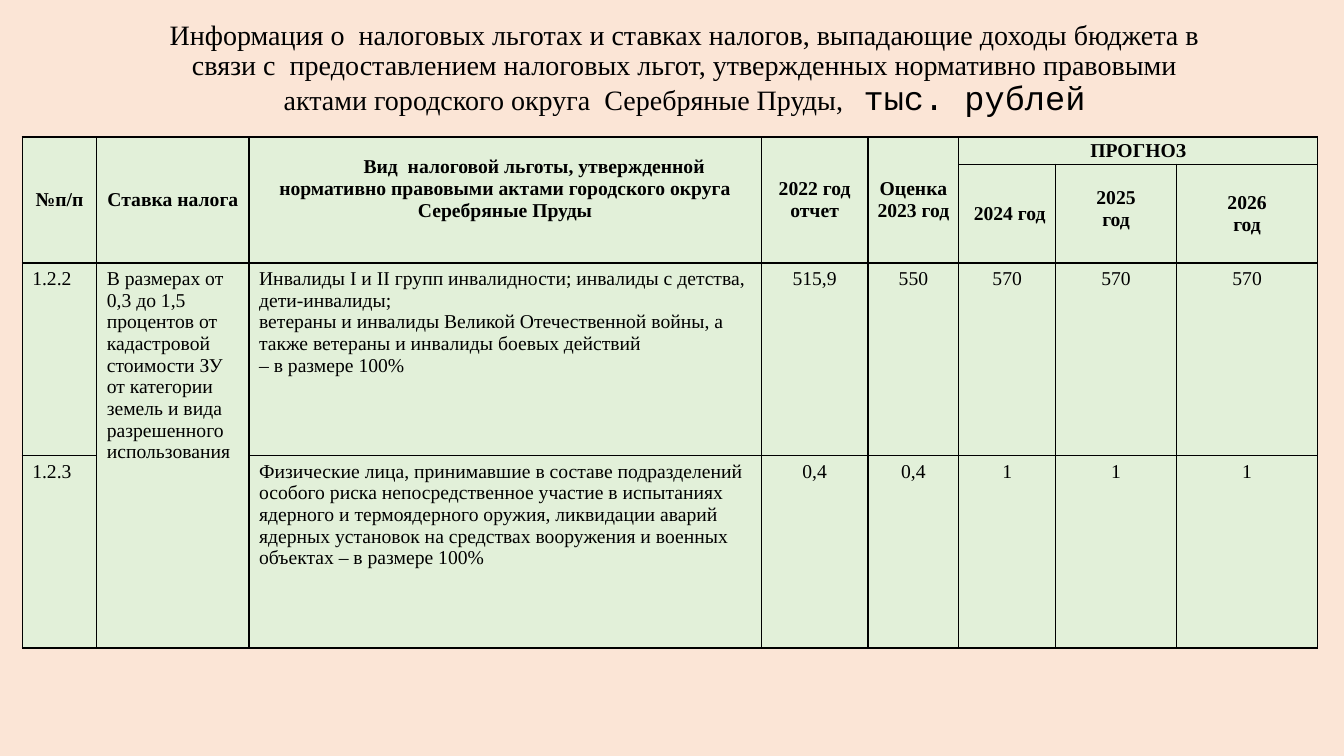
from lxml import etree
from pptx import Presentation
from pptx.dml.color import RGBColor
from pptx.enum.text import MSO_ANCHOR, PP_ALIGN
from pptx.oxml.ns import qn
from pptx.util import Inches, Pt

PEACH = RGBColor(0xFB, 0xE5, 0xD6)
PALE_GREEN = RGBColor(0xE2, 0xF0, 0xD9)
BLACK = RGBColor(0, 0, 0)
LEFT, CENTER = PP_ALIGN.LEFT, PP_ALIGN.CENTER
TOP, MIDDLE = MSO_ANCHOR.TOP, MSO_ANCHOR.MIDDLE
SERIF, MONO = "Times New Roman", "Courier New"

COLUMN_WIDTHS = [0.74, 1.51, 5.08, 1.06, 0.9, 0.96, 1.2, 1.4]
ROW_HEIGHTS = [0.27, 0.98, 1.91, 1.91]
HEADER_ROWS = 2
TEXT_COLUMNS = 3

# Lines within a cell are separate paragraphs; None is covered by a merged cell
ROWS = [
    ["№п/п", "Ставка налога",
     "Вид  налоговой льготы, утвержденной нормативно правовыми актами "
     "городского округа Серебряные Пруды",
     "2022 год\nотчет", "Оценка\n2023 год", "ПРОГНОЗ", None, None],
    [None, None, None, None, None, "2024 год", "2025\nгод", "2026\nгод"],
    ["1.2.2",
     "В размерах от 0,3 до 1,5 процентов от кадастровой стоимости ЗУ "
     "от категории земель и вида разрешенного использования",
     "Инвалиды I и II групп инвалидности; инвалиды с детства, дети-инвалиды;\n"
     "ветераны и инвалиды Великой Отечественной войны, а также ветераны "
     "и инвалиды боевых действий\n– в размере 100%",
     "515,9", "550", "570", "570", "570"],
    ["1.2.3", None,
     "Физические лица, принимавшие в составе подразделений особого риска "
     "непосредственное участие в испытаниях ядерного и термоядерного оружия, "
     "ликвидации аварий ядерных установок на средствах вооружения и военных "
     "объектах – в размере 100%",
     "0,4", "0,4", "1", "1", "1"],
]
# First and last cell (row, column) of each merged area
MERGES = [((0, column), (1, column)) for column in range(5)]
MERGES += [((0, 5), (0, 7)), ((2, 1), (3, 1))]


def add_text(paragraph, text, size=14, font=SERIF, bold=False, align=CENTER):
    paragraph.alignment = align
    run = paragraph.add_run()
    run.text = text
    run.font.size = Pt(size)
    run.font.name = font
    run.font.bold = bold
    run.font.color.rgb = BLACK


def set_borders(cell):
    properties = cell._tc.get_or_add_tcPr()
    for position, side in enumerate(("lnL", "lnR", "lnT", "lnB")):
        line = etree.Element(qn(f"a:{side}"), w=str(Pt(1)))
        fill = etree.SubElement(line, qn("a:solidFill"))
        etree.SubElement(fill, qn("a:srgbClr"), val=str(BLACK))
        properties.insert(position, line)


def add_title(slide, left, top, width, height):
    frame = slide.shapes.add_textbox(
        Inches(left), Inches(top), Inches(width), Inches(height)).text_frame
    frame.word_wrap = True
    frame.vertical_anchor = TOP
    paragraph = frame.paragraphs[0]
    paragraph.line_spacing = 0.9
    add_text(paragraph,
             "Информация о  налоговых льготах и ставках налогов, выпадающие "
             "доходы бюджета в связи с  предоставлением налоговых льгот, "
             "утвержденных нормативно правовыми актами городского округа  "
             "Серебряные Пруды,", size=20)
    add_text(paragraph, " ", size=24, font=MONO, bold=True)
    add_text(paragraph, "тыс. рублей", size=24, font=MONO)


def fill_cell(cell, text, is_header, align):
    cell.fill.solid()
    cell.fill.fore_color.rgb = PALE_GREEN
    set_borders(cell)
    cell.vertical_anchor = MIDDLE if is_header else TOP
    cell.margin_left = cell.margin_right = Inches(0.07 if is_header else 0.1)
    cell.margin_top = cell.margin_bottom = Inches(0 if is_header else 0.05)
    if text is None:
        return
    frame = cell.text_frame
    for index, line in enumerate(text.split("\n")):
        paragraph = frame.add_paragraph() if index else frame.paragraphs[0]
        add_text(paragraph, line, bold=is_header, align=align)


def add_benefits_table(slide, left, top):
    table = slide.shapes.add_table(
        len(ROWS), len(COLUMN_WIDTHS), Inches(left), Inches(top),
        Inches(sum(COLUMN_WIDTHS)), Inches(sum(ROW_HEIGHTS))).table
    table.first_row = table.horz_banding = False
    for column, width in zip(table.columns, COLUMN_WIDTHS):
        column.width = Inches(width)
    for row, height in zip(table.rows, ROW_HEIGHTS):
        row.height = Inches(height)

    for first, last in MERGES:
        table.cell(*first).merge(table.cell(*last))
    for row_index, texts in enumerate(ROWS):
        is_header = row_index < HEADER_ROWS
        for column_index, text in enumerate(texts):
            is_left = not is_header and column_index < TEXT_COLUMNS
            fill_cell(table.cell(row_index, column_index), text, is_header,
                      LEFT if is_left else CENTER)

    # Header cells whose text sits off centre
    benefit = table.cell(0, 2)
    benefit.margin_bottom = Inches(0.22)
    benefit.text_frame.paragraphs[0]._p.get_or_add_pPr().set(
        "indent", str(Inches(0.58)))
    table.cell(1, 5).margin_left = Inches(0.12)
    table.cell(1, 6).margin_bottom = Inches(0.1)


def main():
    presentation = Presentation()
    presentation.slide_width = Inches(13.33)
    presentation.slide_height = Inches(7.5)
    slide = presentation.slides.add_slide(presentation.slide_layouts[6])
    slide.background.fill.solid()
    slide.background.fill.fore_color.rgb = PEACH
    add_title(slide, 1.36, 0.16, 10.86, 1.1)
    add_benefits_table(slide, 0.22, 1.36)
    presentation.save("out.pptx")


if __name__ == "__main__":
    main()
